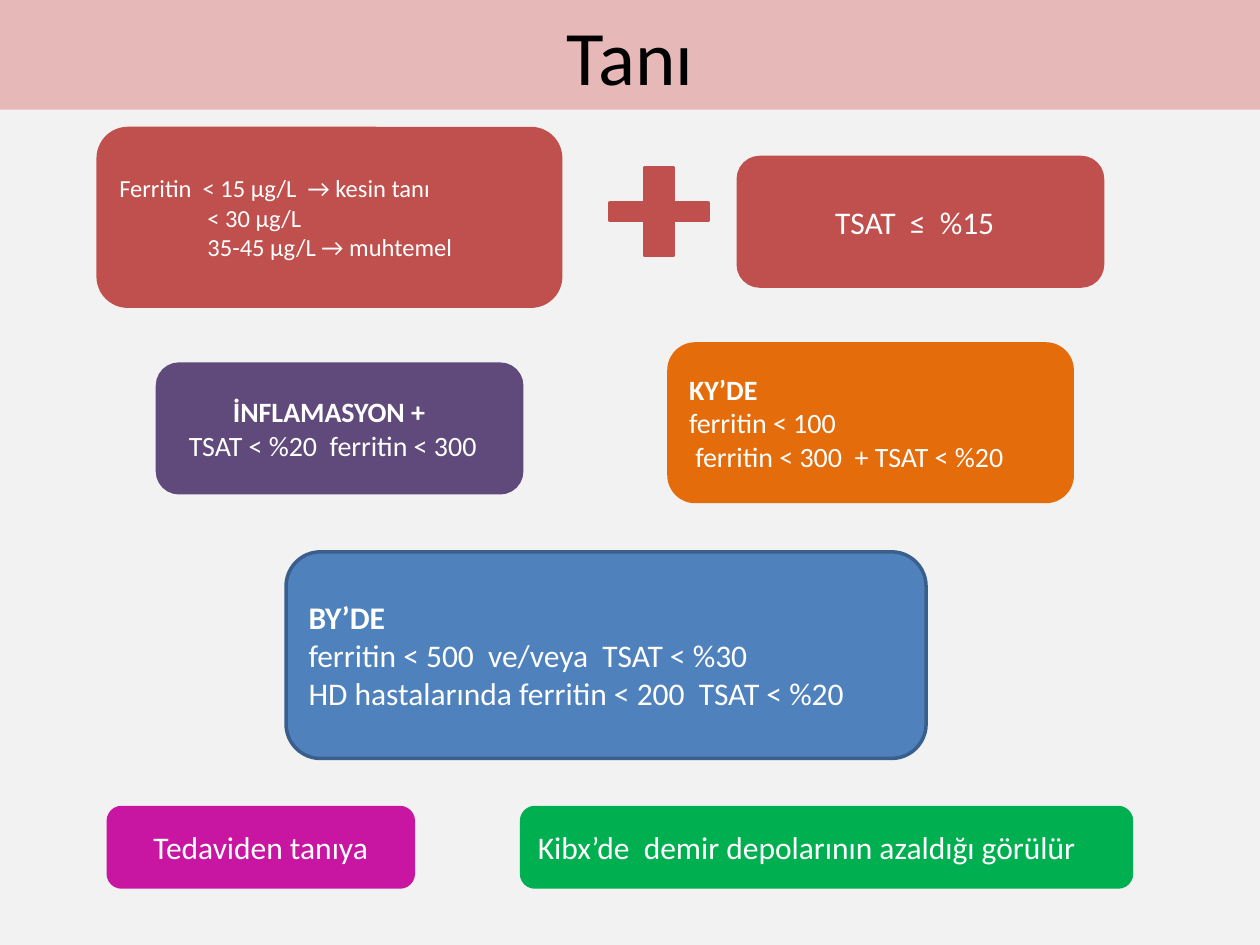
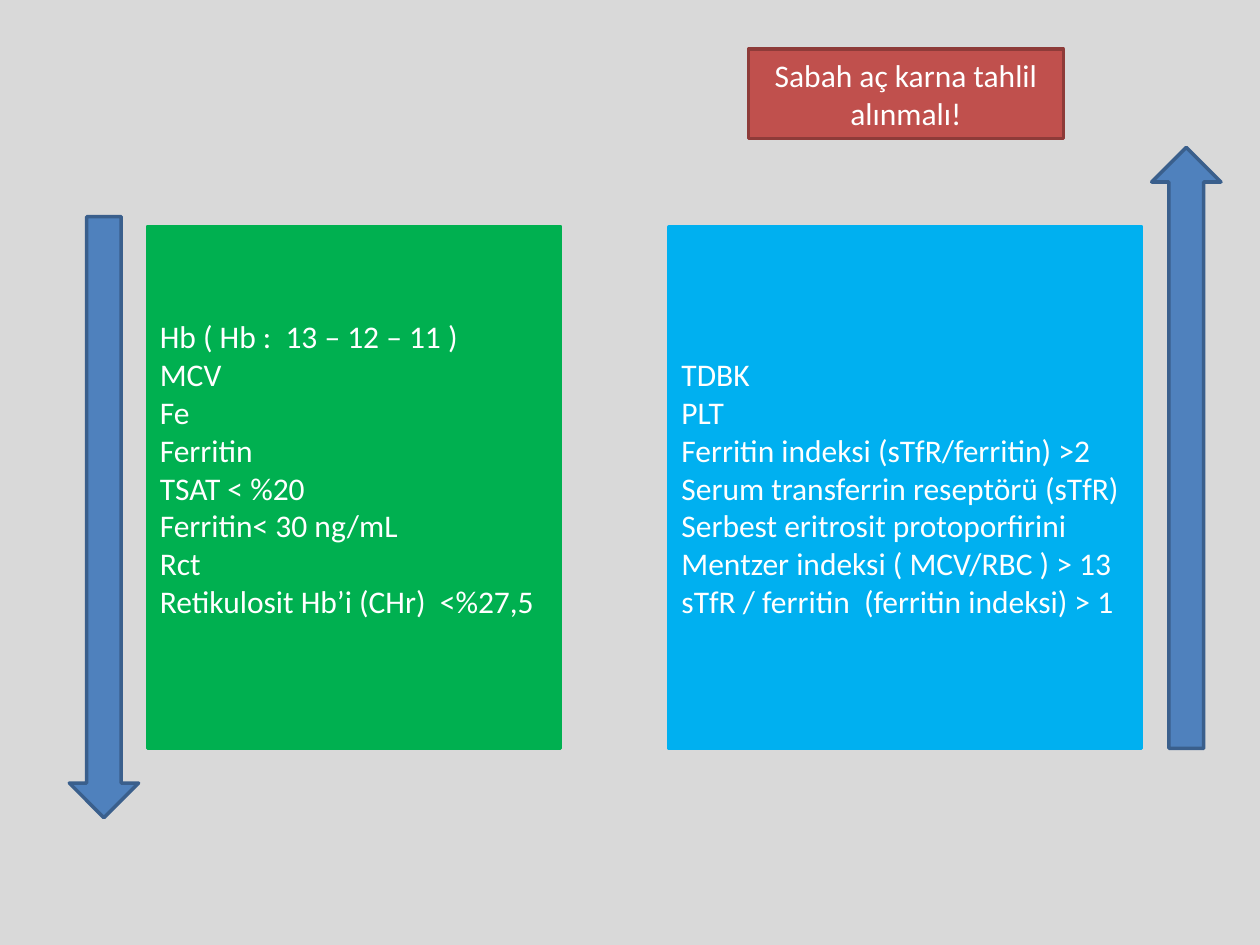
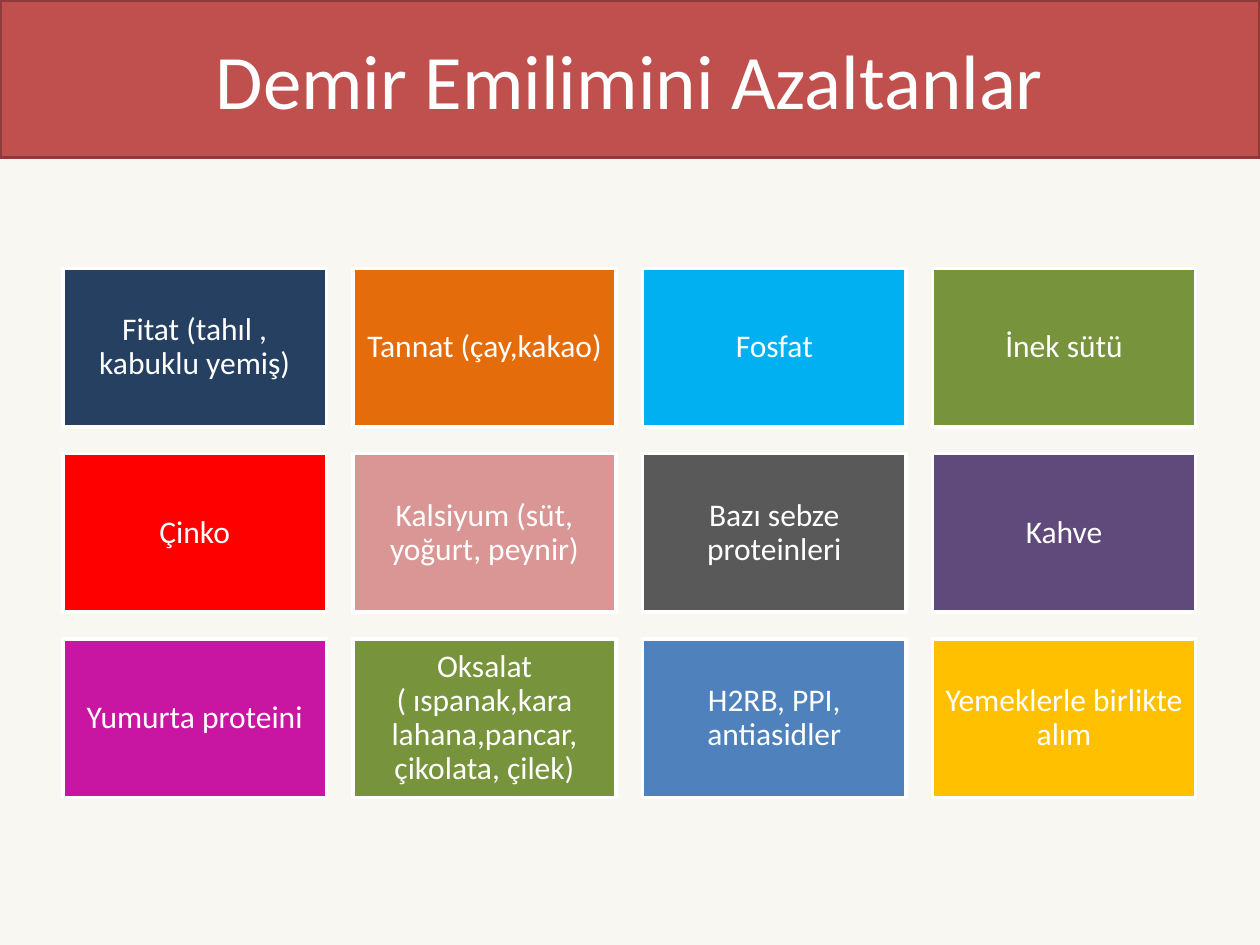
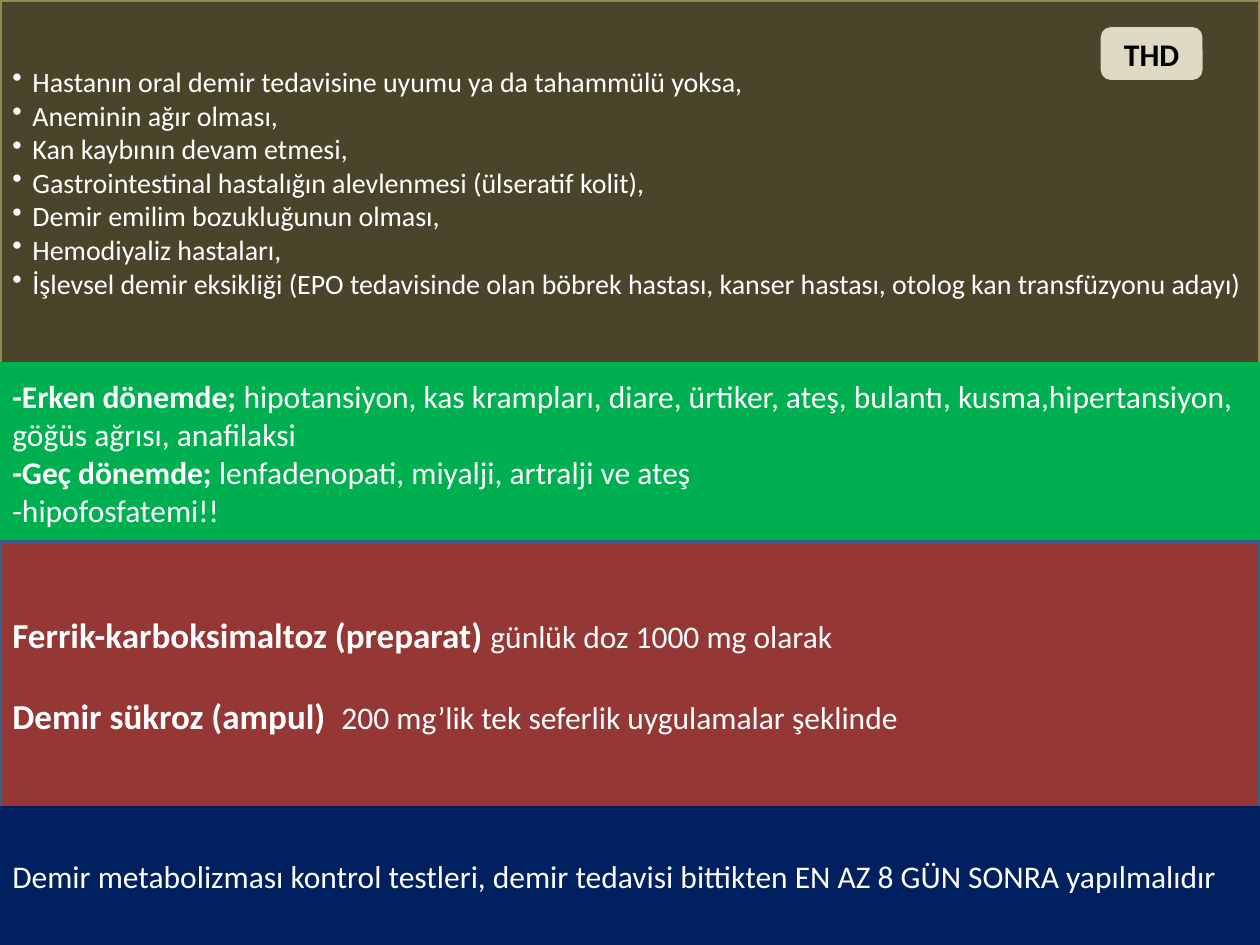
from pptx import Presentation
from pptx.dml.color import RGBColor
from pptx.enum.shapes import MSO_SHAPE
from pptx.enum.text import MSO_ANCHOR, PP_ALIGN
from pptx.oxml.ns import qn
from pptx.util import Inches, Pt
from lxml import etree

RECT, ROUND = MSO_SHAPE.RECTANGLE, MSO_SHAPE.ROUNDED_RECTANGLE
PLUS, DOWN, UP = MSO_SHAPE.CROSS, MSO_SHAPE.DOWN_ARROW, MSO_SHAPE.UP_ARROW
LEFT, CENTER = PP_ALIGN.LEFT, PP_ALIGN.CENTER
MIDDLE = MSO_ANCHOR.MIDDLE

WHITE = RGBColor(0xFF, 0xFF, 0xFF)
BLACK = RGBColor(0, 0, 0)
MIST = RGBColor(0xF2, 0xF2, 0xF2)
SILVER = RGBColor(0xD9, 0xD9, 0xD9)
CREAM = RGBColor(0xF8, 0xF7, 0xF2)
SAND = RGBColor(0xDD, 0xD9, 0xC3)
KHAKI = RGBColor(0x94, 0x8A, 0x54)
OLIVE = RGBColor(0x4A, 0x45, 0x2A)
PINK = RGBColor(0xE6, 0xB9, 0xB8)
ROSE = RGBColor(0xD9, 0x96, 0x94)
BRICK = RGBColor(0xC0, 0x50, 0x4D)
RUST = RGBColor(0x8E, 0x3B, 0x39)
WINE = RGBColor(0x95, 0x37, 0x35)
RED = RGBColor(0xFF, 0, 0)
ORANGE = RGBColor(0xE4, 0x6C, 0x0A)
GOLD = RGBColor(0xFF, 0xC0, 0)
GREEN = RGBColor(0, 0xB0, 0x50)
MOSS = RGBColor(0x77, 0x93, 0x3C)
SKY = RGBColor(0, 0xB0, 0xF0)
BLUE = RGBColor(0x4F, 0x81, 0xBD)
STEEL = RGBColor(0x3A, 0x5F, 0x8C)
DUSK = RGBColor(0x25, 0x40, 0x61)
NAVY = RGBColor(0, 0x20, 0x60)
PURPLE = RGBColor(0x60, 0x4A, 0x7B)
MAGENTA = RGBColor(0xC8, 0x16, 0xA2)
GRAY = RGBColor(0x59, 0x59, 0x59)

FONT = "Calibri"
COLS, ROWS = 100, 75  # the slide is a grid of 0.1 inch cells
CELL = Inches(0.1)
TITLED, BLANK = 5, 6


def inner(box, left, top, width, height):
    """Box at an offset from the corner of another box."""
    return box[0] + left, box[1] + top, width, height


def emu(box):
    return [round(n * CELL) for n in box]


def write(frame, paras, size=18, color=WHITE, bold=False, align=LEFT,
          pads=(), gap=0, bullet=False, leading=None):
    """Fill a frame; a paragraph is a string or a list of (text, bold, size)."""
    frame.word_wrap = True
    frame.vertical_anchor = MIDDLE
    for i, runs in enumerate(paras):
        para = frame.paragraphs[0] if i == 0 else frame.add_paragraph()
        para.alignment = align
        if leading:
            para.line_spacing = leading
        if i and gap:
            para.space_before = Pt(gap)
        props = para._p.get_or_add_pPr()
        if i < len(pads):
            props.set("marL", str(Inches(pads[i])))
        if bullet:
            props.set("marL", str(Inches(0.16)))
            props.set("indent", str(-Inches(0.16)))
            etree.SubElement(props, qn("a:buChar")).set("char", "•")
        if isinstance(runs, str):
            runs = [(runs, bold, size)]
        for text, heavy, points in runs:
            run = para.add_run()
            run.text = text
            font = run.font
            font.name, font.size, font.bold = FONT, Pt(points), heavy
            font.color.rgb = color


def paint(shape, fill, line):
    shape.fill.solid()
    shape.fill.fore_color.rgb = fill
    if line is None:
        shape.line.fill.background()
    else:
        shape.line.color.rgb = line
        shape.line.width = Pt(2)


def block(slide, box, fill, paras=(), line=None, kind=RECT, **form):
    """Filled shape with text; the outline takes the fill colour by default."""
    shape = slide.shapes.add_shape(kind, *emu(box))
    shape.shadow.inherit = False
    paint(shape, fill, line or fill)
    write(shape.text_frame, paras, **form)
    return shape


def start(deck, back, layout=BLANK):
    slide = deck.slides.add_slide(deck.slide_layouts[layout])
    slide.background.fill.solid()
    slide.background.fill.fore_color.rgb = back
    return slide


def head(slide, text, height, fill, color, line=None):
    """Title band across the top; returns the box left below it."""
    title = slide.shapes.title
    title.left, title.top, title.width, title.height = emu((0, 0, COLS, height))
    paint(title, fill, line)
    write(title.text_frame, [text], size=44, color=color, align=CENTER)
    return 0, height, COLS, ROWS - height


def criteria(slide, box):
    def card(place, fill, paras, **form):
        block(slide, inner(box, *place), fill, paras, kind=ROUND, **form)

    card((7.8, 1.5, 36.7, 14.1), BRICK,
         ["Ferritin  < 15 μg/L  → kesin tanı", "< 30 μg/L",
          "35-45 μg/L → muhtemel"], size=14, pads=(0, 0.7, 0.7))
    card((22.7, 35.1, 50.8, 16.4), BLUE,
         [[("BY’DE", True, 18)], "ferritin < 500  ve/veya  TSAT < %30",
          "HD hastalarında ferritin < 200  TSAT < %20"], line=STEEL)
    card((58.6, 3.8, 28.9, 10.2), BRICK, ["TSAT  ≤  %15"], pads=(0.62,))
    card((12.5, 20.2, 28.9, 10.2), PURPLE,
         [[("İNFLAMASYON +", True, 16)], "TSAT < %20  ferritin < 300"],
         size=16, pads=(0.45, 0.1))
    card((53.1, 18.6, 32, 12.5), ORANGE,
         [[("KY’DE", True, 16)], "ferritin < 100",
          "ferritin < 300  + TSAT < %20"], size=16, pads=(0, 0, 0.05))
    card((8.6, 55.4, 24.2, 6.3), MAGENTA, ["Tedaviden tanıya"], align=CENTER)
    card((41.4, 55.4, 48.4, 6.3), GREEN,
         ["Kibx’de  demir depolarının azaldığı görülür"])
    plus = block(slide, inner(box, 48.4, 4.6, 7.8, 7), BRICK, kind=PLUS)
    plus.adjustments[0] = 0.4


def trends(slide, box):
    """Two lists of tests, each beside the arrow of its trend."""
    block(slide, inner(box, 59.4, 3.9, 25, 7.1), BRICK,
          ["Sabah aç karna tahlil alınmalı!"], line=RUST, align=CENTER)
    low = block(slide, inner(box, 11.7, 18, 32.8, 41.4), GREEN,
                ["Hb ( Hb :  13 – 12 – 11 )", "MCV", "Fe", "Ferritin",
                 "TSAT < %20", "Ferritin< 30 ng/mL", "Rct",
                 "Retikulosit Hb’i (CHr)  <%27,5"])
    low.text_frame.margin_bottom = Inches(0.35)
    block(slide, inner(box, 53.1, 18, 37.5, 41.4), SKY,
          ["TDBK", "PLT", "Ferritin indeksi (sTfR/ferritin) >2",
           "Serum transferrin reseptörü (sTfR)",
           "Serbest eritrosit protoporfirini",
           "Mentzer indeksi ( MCV/RBC ) > 13",
           "sTfR / ferritin  (ferritin indeksi) > 1"])
    for kind, left, top in ((DOWN, 5.5, 17.2), (UP, 91.4, 11.7)):
        block(slide, inner(box, left, top, 5.5, 47.7), BLUE, line=STEEL,
              kind=kind)


def tiles(slide, box, items, cols=4, wide=20.9, high=12.6, gap=2.1):
    for i, (text, fill) in enumerate(items):
        row, col = divmod(i, cols)
        place = inner(box, col * (wide + gap), row * (high + gap), wide, high)
        tile = block(slide, place, fill, [text], line=WHITE, align=CENTER,
                     leading=0.9)
        frame = tile.text_frame
        frame.margin_left = frame.margin_right = Inches(0.07)
        frame.margin_top = frame.margin_bottom = Inches(0.07)


def bands(slide, box, items):
    """Stack full-width bands of the given heights."""
    top = 0
    for high, fill, line, paras, form in items:
        block(slide, inner(box, 0, top, box[2], high), fill, paras,
              line=line, **form)
        top += high


INHIBITORS = [
    ("Fitat (tahıl , kabuklu yemiş)", DUSK), ("Tannat (çay,kakao)", ORANGE),
    ("Fosfat", SKY), ("İnek sütü", MOSS),
    ("Çinko", RED), ("Kalsiyum (süt, yoğurt, peynir)", ROSE),
    ("Bazı sebze proteinleri", GRAY), ("Kahve", PURPLE),
    ("Yumurta proteini", MAGENTA),
    ("Oksalat ( ıspanak,kara lahana,pancar, çikolata, çilek)", MOSS),
    ("H2RB, PPI, antiasidler", BLUE), ("Yemeklerle birlikte alım", GOLD),
]

THERAPY = [
    (28.9, OLIVE, KHAKI,
     ["Hastanın oral demir tedavisine uyumu ya da tahammülü yoksa,",
      "Aneminin ağır olması,",
      "Kan kaybının devam etmesi,",
      "Gastrointestinal hastalığın alevlenmesi (ülseratif kolit),",
      "Demir emilim bozukluğunun olması,",
      "Hemodiyaliz hastaları,",
      "İşlevsel demir eksikliği (EPO tedavisinde olan böbrek hastası, "
      "kanser hastası, otolog kan transfüzyonu adayı)"],
     {"size": 16, "bullet": True}),
    (14.1, GREEN, GREEN,
     [[("-Erken dönemde; ", True, 18),
       ("hipotansiyon, kas krampları, diare, ürtiker, ateş, bulantı, "
        "kusma,hipertansiyon, göğüs ağrısı, anafilaksi", False, 18)],
      [("-Geç dönemde; ", True, 18),
       ("lenfadenopati, miyalji, artralji ve ateş", False, 18)],
      "-hipofosfatemi!!"], {}),
    (21.1, WINE, STEEL,
     [[("Ferrik-karboksimaltoz (preparat) ", True, 20),
       ("günlük doz 1000 mg olarak", False, 18)],
      [("Demir sükroz (ampul)  ", True, 20),
       ("200 mg’lik tek seferlik uygulamalar şeklinde", False, 18)]],
     {"gap": 22}),
    (10.9, NAVY, NAVY,
     ["Demir metabolizması kontrol testleri, demir tedavisi bittikten "
      "EN AZ 8 GÜN SONRA yapılmalıdır"], {}),
]


def main():
    deck = Presentation()
    deck.slide_width, deck.slide_height = COLS * CELL, ROWS * CELL
    page = (0, 0, COLS, ROWS)

    slide = start(deck, MIST, TITLED)
    criteria(slide, head(slide, "Tanı", 8.7, PINK, BLACK))

    trends(start(deck, SILVER), page)

    slide = start(deck, CREAM, TITLED)
    body = head(slide, "Demir Emilimini Azaltanlar", 12.5, BRICK, WHITE, RUST)
    tiles(slide, inner(body, 5, 8.8, 90, 42), INHIBITORS)

    slide = start(deck, WHITE)
    bands(slide, page, THERAPY)
    block(slide, inner(page, 87.5, 2.3, 7.8, 3.9), SAND, ["THD"], kind=ROUND,
          color=BLACK, bold=True, align=CENTER)

    deck.save("out.pptx")


if __name__ == "__main__":
    main()
